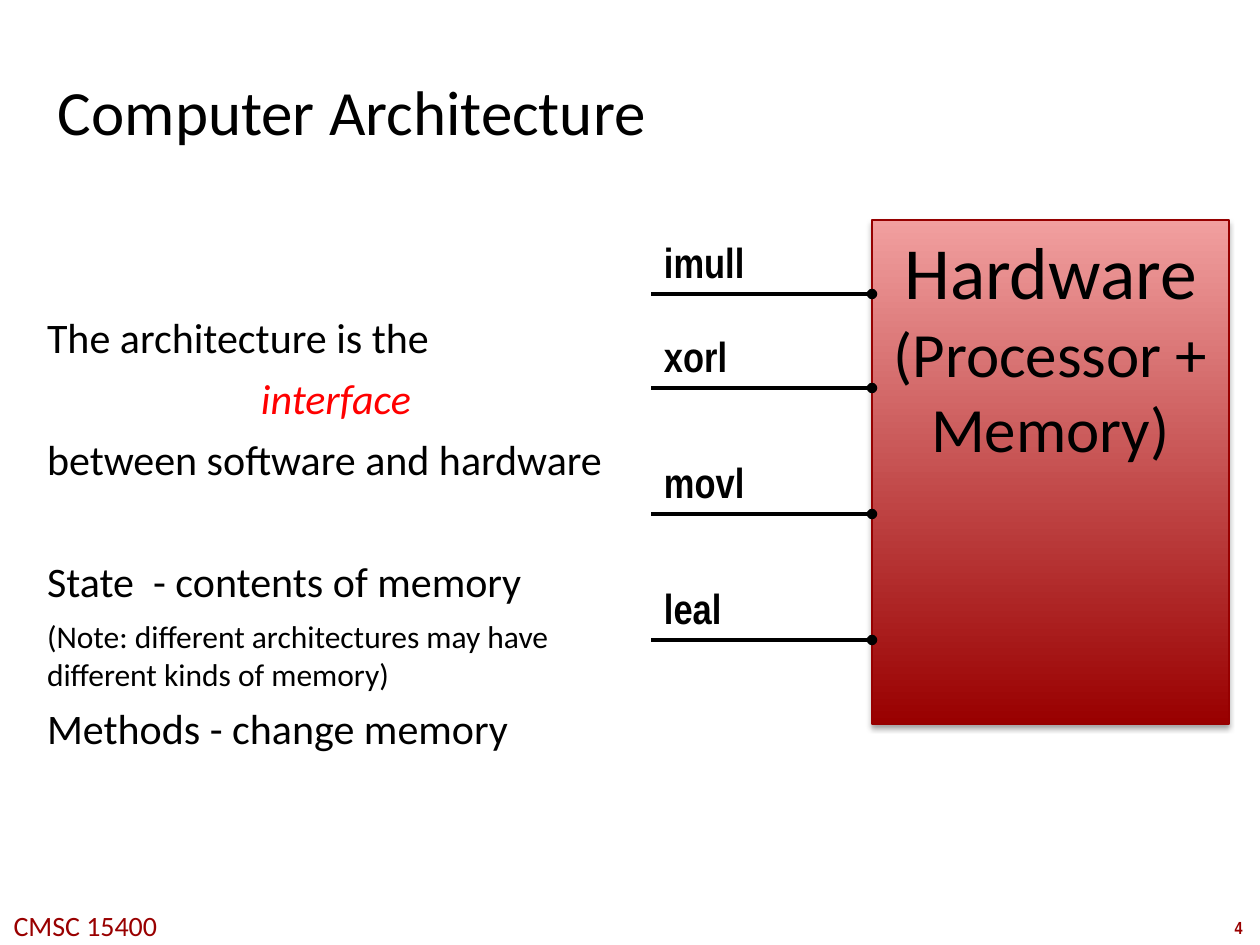
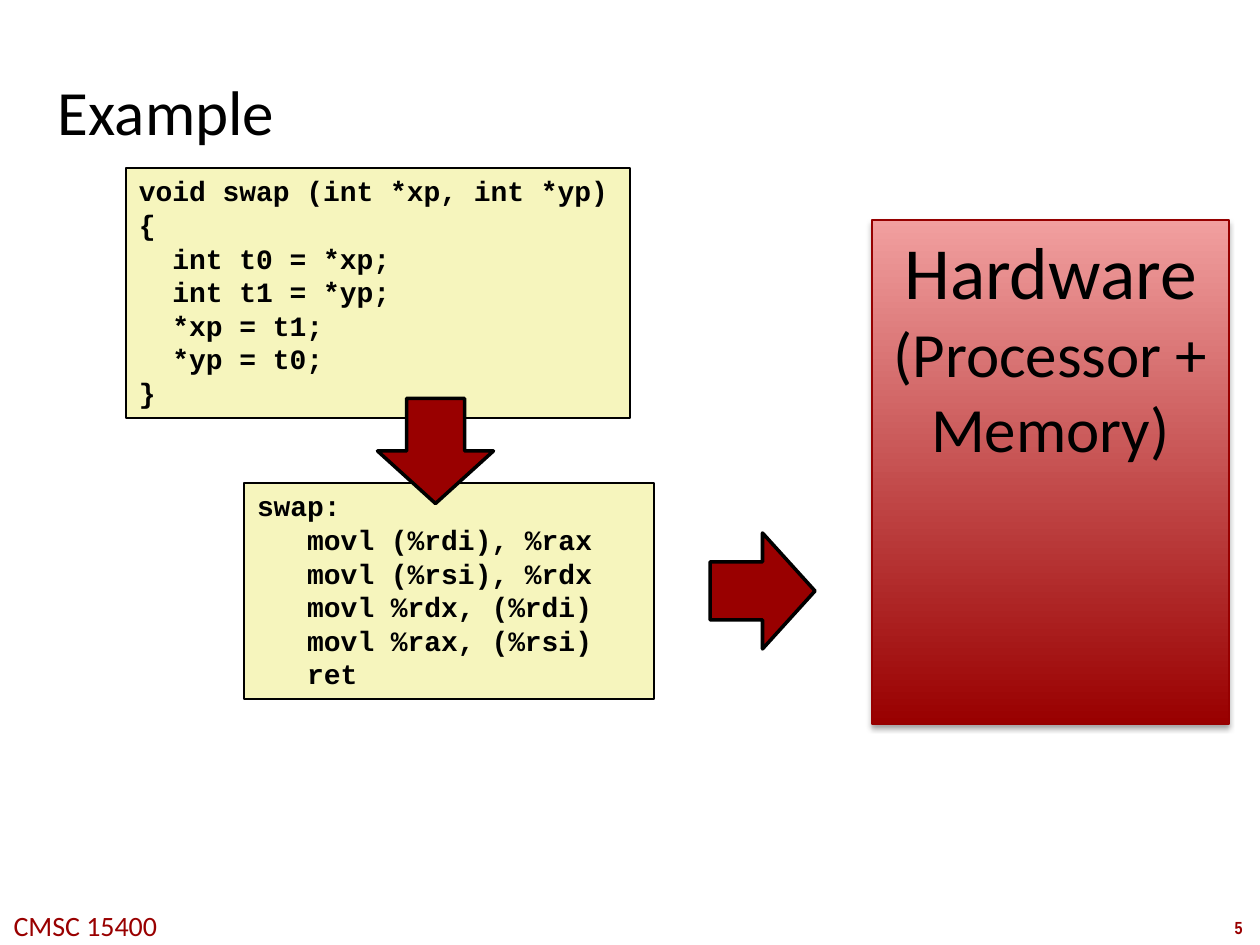
from dataclasses import dataclass

from lxml import etree
from pptx import Presentation
from pptx import util as u
from pptx.dml.color import RGBColor
from pptx.enum import shapes, text
from pptx.oxml import ns

COURSE = "CMSC 15400"
HARDWARE = [("Hardware", 42), ("(Processor + Memory)", 36)]
INSTRUCTIONS = [("imull", 294), ("xorl", 388), ("movl", 514), ("leal", 640)]
ARCHITECTURE = [
    {"words": "The architecture is the", "before": 0},
    {"words": "interface", "color": "FF0000", "italic": True, "align": "CENTER"},
    {"words": "between software and hardware"},
    {"words": "State  - contents of memory", "before": 41},
    {"words": "(Note: different architectures may have different kinds of memory)", "size": 18},
    {"words": "Methods - change memory"},
]
C_CODE = """void swap (int *xp, int *yp)
{
  int t0 = *xp;
  int t1 = *yp;
  *xp = t1;
  *yp = t0;
}"""
ASSEMBLY = """swap:
   movl (%rdi), %rax
   movl (%rsi), %rdx
   movl %rdx, (%rdi)
   movl %rax, (%rsi)
   ret"""
CODE_BOXES = [(C_CODE, (126, 168, 504, 250)), (ASSEMBLY, (244, 483, 410, 216))]
ARROWS = [((383, 393, 105, 116), 90), ((710, 533, 105, 116), 0)]


@dataclass(frozen=True)
class Theme:
    body_font: str = "Calibri"
    label_font: str = "Arial Narrow"
    code_font: str = "Courier New"
    ink: str = "000000"
    maroon: str = "990000"
    maroon_edge: str = "960000"
    pink: str = "F19F9F"
    cream: str = "F6F5BD"
    title: int = 36
    body: int = 24
    code: int = 16
    footer: int = 16
    number: int = 10


THEME = Theme()
PX = 914400 / 126
INSET = (13, 6)
TIGHT = (5, 5)
HARDWARE_AREA = (872, 220, 357, 504)
WIRE_LEFT = 651


def px(*lengths):
    return [u.Emu(round(length * PX)) for length in lengths]


def rgb(color):
    return RGBColor.from_string(color)


def set_up_frame(shape, inset=INSET, anchor="TOP", wrap=True):
    frame = shape.text_frame
    frame.word_wrap = wrap
    frame.auto_size = text.MSO_AUTO_SIZE.NONE
    frame.vertical_anchor = text.MSO_ANCHOR[anchor]
    frame.margin_left, frame.margin_top = px(*inset)
    frame.margin_right, frame.margin_bottom = px(*inset)
    return frame


def write(frame, lines):
    for index, line in enumerate(lines):
        paragraph = frame.paragraphs[0] if index == 0 else frame.add_paragraph()
        paragraph.alignment = text.PP_ALIGN[line.get("align", "LEFT")]
        paragraph.space_before = u.Pt(line.get("before", 0))
        run = paragraph.add_run()
        run.text = line["words"]
        font = run.font
        font.name = line.get("font", THEME.body_font)
        font.size = u.Pt(line.get("size", THEME.body))
        font.bold = line.get("bold", False)
        font.italic = line.get("italic", False)
        font.color.rgb = rgb(line.get("color", THEME.ink))


def add_text(slide, area, lines, **frame_options):
    box = slide.shapes.add_textbox(*px(*area))
    write(set_up_frame(box, **frame_options), lines)


def add_shape(slide, kind, area, fill, edge, edge_width):
    shape = slide.shapes.add_shape(shapes.MSO_SHAPE[kind], *px(*area))
    shape.shadow.inherit = False
    if fill:
        shape.fill.solid()
        shape.fill.fore_color.rgb = rgb(fill)
    shape.line.color.rgb = rgb(edge)
    shape.line.width = u.Pt(edge_width)
    return shape


def add_hardware(slide):
    shape = add_shape(slide, "RECTANGLE", HARDWARE_AREA, None, THEME.maroon_edge, 0.75)
    shape.fill.gradient()
    shape.fill.gradient_angle = 90
    for stop, color in zip(shape.fill.gradient_stops, (THEME.maroon, THEME.pink)):
        stop.color.rgb = rgb(color)
    effects = shape.element.spPr.find(ns.qn("a:effectLst"))
    shadow = etree.SubElement(
        effects, ns.qn("a:outerShdw"), blurRad=str(u.Pt(3.1)), dist=str(u.Pt(1.8)),
        dir="5400000", rotWithShape="0")
    color = etree.SubElement(shadow, ns.qn("a:srgbClr"), val=THEME.ink)
    etree.SubElement(color, ns.qn("a:alpha"), val="35000")
    write(set_up_frame(shape), [
        {"words": words, "size": size, "align": "CENTER"} for words, size in HARDWARE])


def add_instruction(slide, name, y):
    right = HARDWARE_AREA[0]
    wire = slide.shapes.add_connector(
        shapes.MSO_CONNECTOR.STRAIGHT, *px(right, y, WIRE_LEFT, y))
    wire.line.color.rgb = rgb(THEME.ink)
    wire.line.width = u.Pt(2)
    properties = wire.element.spPr
    etree.SubElement(properties.find(ns.qn("a:ln")), ns.qn("a:headEnd"), type="oval")
    etree.SubElement(properties, ns.qn("a:effectLst"))
    add_text(slide, (WIRE_LEFT, y - 63, right - WIRE_LEFT, 63),
             [{"words": name, "font": THEME.label_font, "bold": True}])


def add_code(slide, code, area):
    shape = add_shape(slide, "RECTANGLE", area, THEME.cream, THEME.ink, 1)
    write(set_up_frame(shape), [
        {"words": line, "font": THEME.code_font, "size": THEME.code, "bold": True}
        for line in code.splitlines()])


def add_slide(presentation, title, number):
    slide = presentation.slides.add_slide(presentation.slide_layouts[6])
    add_text(slide, (1217, 911, 43, 34),
             [{"words": str(number), "font": THEME.label_font, "size": THEME.number,
               "color": THEME.maroon, "bold": True, "align": "CENTER"}], wrap=False)
    add_text(slide, (-4, 903, 179, 47),
             [{"words": COURSE, "size": THEME.footer, "color": THEME.maroon,
               "align": "CENTER"}], wrap=False)
    add_text(slide, (53, 35, 1155, 150), [{"words": title, "size": THEME.title}],
             inset=TIGHT, anchor="MIDDLE")
    return slide


def add_architecture(presentation):
    slide = add_slide(presentation, "Computer Architecture", 4)
    add_hardware(slide)
    add_text(slide, (42, 307, 588, 469),
             [{"before": 6, **line} for line in ARCHITECTURE], inset=TIGHT)
    for name, y in INSTRUCTIONS:
        add_instruction(slide, name, y)


def add_example(presentation):
    slide = add_slide(presentation, "Example", 5)
    for code, area in CODE_BOXES:
        add_code(slide, code, area)
    add_hardware(slide)
    for area, rotation in ARROWS:
        arrow = add_shape(slide, "RIGHT_ARROW", area, THEME.maroon, THEME.ink, 2)
        arrow.rotation = rotation


def main():
    presentation = Presentation()
    presentation.slide_width, presentation.slide_height = px(1260, 945)
    add_architecture(presentation)
    add_example(presentation)
    presentation.save("out.pptx")


if __name__ == "__main__":
    main()
